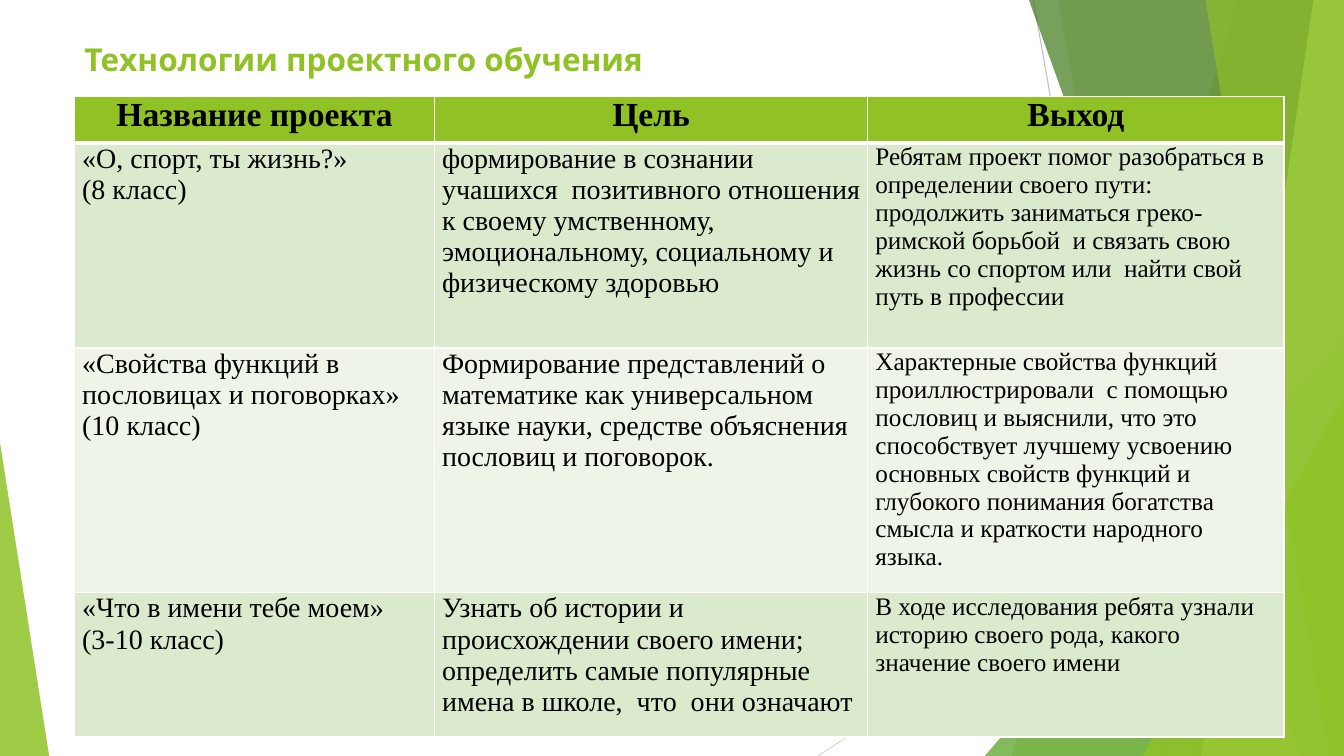
from lxml.etree import SubElement
from pptx import Presentation
from pptx.dml.color import RGBColor
from pptx.enum.shapes import MSO_CONNECTOR, MSO_SHAPE
from pptx.enum.text import PP_ALIGN
from pptx.oxml.ns import qn
from pptx.util import Cm, Pt

WIDTH, HEIGHT = 33.87, 19.05
COLORS = {
    "green": "90C226", "leaf": "54A021", "forest": "3F7819", "lime": "C0E474",
    "odd_row": "DBE9CD", "even_row": "EEF4E8", "white": "FFFFFF", "black": "000000",
    "grey": "BFBFBF", "light_grey": "D9D9D9",
}
COLUMN_WIDTHS = [9.07, 10.92, 10.49]
ROW_HEIGHTS = [1.17, 5.16, 6.17, 3.63]
BODY_SIZES = [20, 20, 18]
PROJECTS = [
    ["Название проекта", "Цель", "Выход"],
    ["«О, спорт, ты жизнь?»\n(8 класс)",
     "формирование в сознании учашихся  позитивного отношения к своему умственному, "
     "эмоциональному, социальному и физическому здоровью",
     "Ребятам проект помог разобраться в определении своего пути: продолжить заниматься "
     "греко-римской борьбой  и связать свою жизнь со спортом или  найти свой путь в профессии"],
    ["«Свойства функций в пословицах и поговорках»\n(10 класс)",
     "Формирование представлений о математике как универсальном языке науки, "
     "средстве объяснения  пословиц и поговорок.",
     "Характерные свойства функций проиллюстрировали  с помощью пословиц и выяснили, "
     "что это способствует лучшему усвоению основных свойств функций и глубокого "
     "понимания богатства смысла и краткости народного языка."],
    ["«Что в имени тебе моем»\n(3-10 класс)",
     "Узнать об истории и происхождении своего имени; определить самые популярные "
     "имена в школе,  что  они означают",
     "В ходе исследования ребята узнали историю своего рода, какого  значение своего имени"],
]


class SlideBuilder:
    title_font, table_font = "Karla", "Times New Roman"

    def __init__(self, s):
        self.s = s

    def color(self, name):
        return RGBColor.from_string(COLORS[name])

    def paint(self, sp, color, opacity):
        """Fill a shape without outline; opacity is in percent."""
        sp.shadow.inherit = False
        sp.line.fill.background()
        sp.fill.solid()
        sp.fill.fore_color.rgb = self.color(color)
        clr = sp.fill._xPr.find(".//" + qn("a:srgbClr"))
        SubElement(clr, qn("a:alpha"), val=str(opacity * 1000))

    def line(self, x1, y1, x2, y2, color):
        sp = self.s.shapes.add_connector(
            MSO_CONNECTOR.STRAIGHT, Cm(x1), Cm(y1), Cm(x2), Cm(y2))
        sp.line.color.rgb = self.color(color)
        sp.line.width = Pt(0.75)
        SubElement(sp._element.spPr, qn("a:effectLst"))

    def band(self, top_x, bottom_x, color, opacity):
        """Full-height band from a slanted left side to the slide's right edge."""
        fb = self.s.shapes.build_freeform(Cm(top_x), 0)
        fb.add_line_segments([(Cm(WIDTH), 0), (Cm(WIDTH), Cm(HEIGHT)),
                              (Cm(bottom_x), Cm(HEIGHT))], close=True)
        self.paint(fb.convert_to_shape(), color, opacity)

    def triangle(self, x, y, width, apex, color, opacity):
        """Triangle standing on the slide's bottom edge; apex 0 is left, 1 is right."""
        sp = self.s.shapes.add_shape(MSO_SHAPE.ISOSCELES_TRIANGLE, Cm(x), Cm(y),
                                     Cm(width), Cm(HEIGHT - y))
        sp.adjustments[0] = apex
        self.paint(sp, color, opacity)

    def style(self, p, font, size, color, bold):
        p.font.name, p.font.size, p.font.bold = font, Pt(size), bold
        p.font.color.rgb = self.color(color)

    def title(self, x, y, width, height, text):
        tf = self.s.shapes.add_textbox(Cm(x), Cm(y), Cm(width), Cm(height)).text_frame
        tf.word_wrap = True
        tf.text = text
        self.style(tf.paragraphs[0], self.title_font, 22.5, "green", True)

    def borders(self, cell, top, bottom):
        tc_pr = cell._tc.get_or_add_tcPr()
        for side, width in zip("LRTB", (1, 1, top, bottom)):
            ln = SubElement(tc_pr, qn(f"a:ln{side}"), w=str(Pt(width)))
            fill = SubElement(ln, qn("a:solidFill"))
            SubElement(fill, qn("a:srgbClr"), val=COLORS["white"])

    def cell(self, cell, text, row, column):
        header = row == 0
        cell.margin_left = cell.margin_right = Cm(0.19)
        cell.margin_top = cell.margin_bottom = 0
        self.borders(cell, 3 if row == 1 else 1, 3 if header else 1)
        cell.fill.solid()
        fill = "green" if header else "odd_row" if row % 2 else "even_row"
        cell.fill.fore_color.rgb = self.color(fill)
        cell.text = text
        for p in cell.text_frame.paragraphs:
            p.alignment = PP_ALIGN.CENTER if header else PP_ALIGN.LEFT
            size = 24 if header else BODY_SIZES[column]
            self.style(p, self.table_font, size, "black", header)

    def table(self, x, y, widths, heights, rows):
        table = self.s.shapes.add_table(len(rows), len(widths), Cm(x), Cm(y),
                                        Cm(sum(widths)), Cm(sum(heights))).table
        for column, width in zip(table.columns, widths):
            column.width = Cm(width)
        for i, (height, texts) in enumerate(zip(heights, rows)):
            table.rows[i].height = Cm(height)
            for j, text in enumerate(texts):
                self.cell(table.cell(i, j), text, i, j)


def main():
    prs = Presentation()
    prs.slide_width, prs.slide_height = Cm(WIDTH), Cm(HEIGHT)
    b = SlideBuilder(prs.slides.add_slide(prs.slide_layouts[6]))

    b.line(26.04, 0, 29.41, HEIGHT, "grey")
    b.line(WIDTH, 10.24, 20.62, HEIGHT, "light_grey")
    b.band(31.19, 25.5, "green", 30)
    b.band(26.67, 30.05, "green", 20)
    b.triangle(24.82, 8.46, 9.05, 1, "leaf", 72)
    b.band(25.93, 32.79, "forest", 70)
    b.band(33.1, 30.28, "lime", 70)
    b.band(30.38, 33.48, "green", 65)
    b.triangle(28.8, 9.98, 5.07, 1, "green", 80)
    b.triangle(0, 11.15, 1.24, 0, "green", 85)

    b.title(1.88, 0.89, 23.88, 1.83, "Технологии проектного обучения")
    b.table(1.88, 2.44, COLUMN_WIDTHS, ROW_HEIGHTS, PROJECTS)
    prs.save("out.pptx")


if __name__ == "__main__":
    main()
